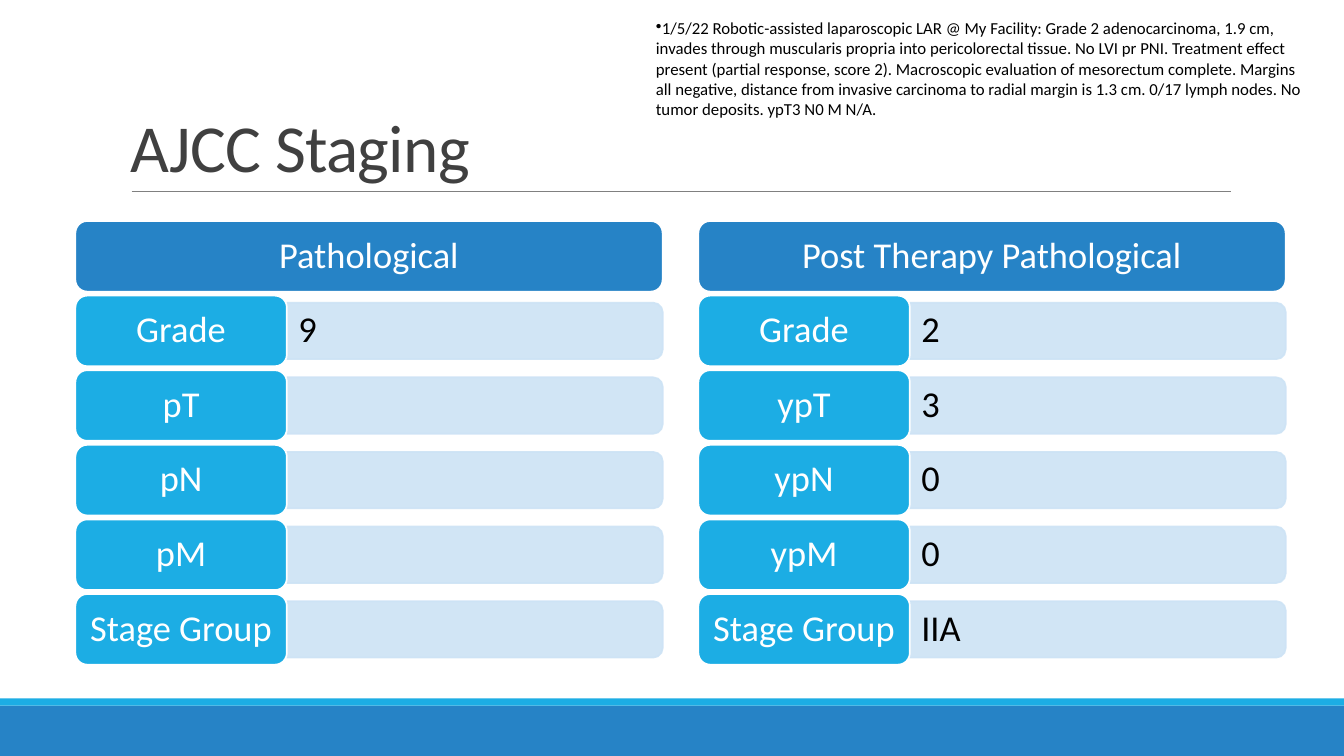
"""Build the AJCC staging slide with two columns of staging values."""
from lxml.etree import SubElement
from pptx import Presentation
from pptx.dml.color import RGBColor
from pptx.enum.shapes import MSO_CONNECTOR, MSO_SHAPE as Preset
from pptx.enum.text import MSO_ANCHOR as Anchor, PP_ALIGN as Align
from pptx.oxml.ns import qn
from pptx.util import Cm, Pt

TITLE = "AJCC Staging"
NOTE = (
    "1/5/22 Robotic-assisted laparoscopic LAR @ My Facility: Grade 2 adenocarcinoma, 1.9 cm, "
    "invades through muscularis propria into pericolorectal tissue. No LVI pr PNI. Treatment "
    "effect present (partial response, score 2). Macroscopic evaluation of mesorectum complete. "
    "Margins all negative, distance from invasive carcinoma to radial margin is 1.3 cm. "
    "0/17 lymph nodes. No tumor deposits. ypT3 N0 M N/A."
)
COLUMNS = [
    ("Pathological",
     [("Grade", "9"), ("pT", ""), ("pN", ""), ("pM", ""), ("Stage Group", "")]),
    ("Post Therapy Pathological",
     [("Grade", "2"), ("ypT", "3"), ("ypN", "0"), ("ypM", "0"), ("Stage Group", "IIA")]),
]

BLUE = RGBColor(0x26, 0x83, 0xC6)
CYAN = RGBColor(0x1C, 0xAD, 0xE4)
PALE = RGBColor(0xCD, 0xE3, 0xF5)
WHITE = RGBColor(0xFF, 0xFF, 0xFF)
BLACK = RGBColor(0, 0, 0)
DARK = RGBColor(0x40, 0x40, 0x40)
GREY = RGBColor(0x80, 0x80, 0x80)

SLIDE_WIDTH, SLIDE_HEIGHT = 33.87, 19.05
GRID_LEFT, GRID_TOP = 1.9, 5.57
COLUMN_WIDTH, COLUMN_PITCH = 14.8, 15.7
ROW_HEIGHT, ROW_PITCH = 1.78, 1.88
LABEL_WIDTH = 5.33
BAR_LENGTH, BAR_HEIGHT = 9.47, 1.42
VALUE_HEIGHT = 1.3


def write(shape, text, size=26, color=WHITE, align=Align.LEFT, anchor=Anchor.MIDDLE,
          line_spacing=0.9, side_inset=0.25, letter_spacing=0, bullet=None):
    frame = shape.text_frame
    frame.word_wrap = True
    frame.vertical_anchor = anchor
    frame.margin_left = frame.margin_right = Cm(side_inset)
    paragraph = frame.paragraphs[0]
    paragraph.alignment = align
    paragraph.line_spacing = line_spacing
    if bullet:
        SubElement(paragraph._p.get_or_add_pPr(), qn("a:buChar")).set("char", bullet)
    run = paragraph.add_run()
    run.text = text
    run.font.name = "Calibri"
    run.font.size = Pt(size)
    run.font.color.rgb = color
    if letter_spacing:
        run._r.get_or_add_rPr().set("spc", str(round(letter_spacing * 100)))


def add_box(slide, preset, left, top, width, height, fill, line=None):
    shape = slide.shapes.add_shape(preset, Cm(left), Cm(top), Cm(width), Cm(height))
    shape.shadow.inherit = False
    shape.fill.solid()
    shape.fill.fore_color.rgb = fill
    if line is None:
        shape.line.fill.background()
    else:
        shape.line.color.rgb = line
        shape.line.width = Pt(1.25)
    return shape


def add_text(slide, text, left, top, width, height, **style):
    box = slide.shapes.add_textbox(Cm(left), Cm(top), Cm(width), Cm(height))
    write(box, text, **style)


def add_bar(slide, left, middle):
    bar = add_box(slide, Preset.ROUND_2_SAME_RECTANGLE,
                  left + (BAR_LENGTH - BAR_HEIGHT) / 2, middle - BAR_LENGTH / 2,
                  BAR_HEIGHT, BAR_LENGTH, PALE, PALE)
    bar.rotation = 90
    for color in bar._element.spPr.iter(qn("a:srgbClr")):
        SubElement(color, qn("a:alpha")).set("val", "90000")


def add_column(slide, left, heading, rows):
    header = add_box(slide, Preset.ROUNDED_RECTANGLE, left, GRID_TOP,
                     COLUMN_WIDTH, ROW_HEIGHT, BLUE, WHITE)
    write(header, heading, align=Align.CENTER)
    bar_left = left + LABEL_WIDTH
    for number, (label, value) in enumerate(rows, start=1):
        top = GRID_TOP + number * ROW_PITCH
        middle = top + ROW_HEIGHT / 2
        add_bar(slide, bar_left, middle)
        if value:
            add_text(slide, value, bar_left, middle - VALUE_HEIGHT / 2,
                     BAR_LENGTH, VALUE_HEIGHT, color=BLACK, side_inset=0.29)
        box = add_box(slide, Preset.ROUNDED_RECTANGLE, left, top,
                      LABEL_WIDTH, ROW_HEIGHT, CYAN, WHITE)
        write(box, label, align=Align.CENTER, side_inset=0.1)


def add_rule(slide, left, right, top):
    rule = slide.shapes.add_connector(MSO_CONNECTOR.STRAIGHT,
                                      Cm(left), Cm(top), Cm(right), Cm(top))
    rule.line.color.rgb = GREY
    rule.line.width = Pt(0.5)
    SubElement(rule._element.spPr, qn("a:effectLst"))


def main():
    presentation = Presentation()
    presentation.slide_width = Cm(SLIDE_WIDTH)
    presentation.slide_height = Cm(SLIDE_HEIGHT)
    slide = presentation.slides.add_slide(presentation.slide_layouts[6])
    add_box(slide, Preset.RECTANGLE, 0, 17.78, SLIDE_WIDTH, 1.27, BLUE)
    add_box(slide, Preset.RECTANGLE, 0, 17.6, SLIDE_WIDTH, 0.18, CYAN)
    add_rule(slide, 3.32, 31.01, 4.82)
    add_text(slide, TITLE, 3.05, 0.79, 27.94, 4.04, size=48, color=DARK,
             anchor=Anchor.BOTTOM, line_spacing=0.85, letter_spacing=-0.5)
    for index, (heading, rows) in enumerate(COLUMNS):
        add_column(slide, GRID_LEFT + index * COLUMN_PITCH, heading, rows)
    add_text(slide, NOTE, 16.28, 0.33, 16.94, 2.82, size=12, color=BLACK,
             anchor=Anchor.TOP, line_spacing=1.0, bullet="•")
    presentation.save("out.pptx")


if __name__ == "__main__":
    main()
